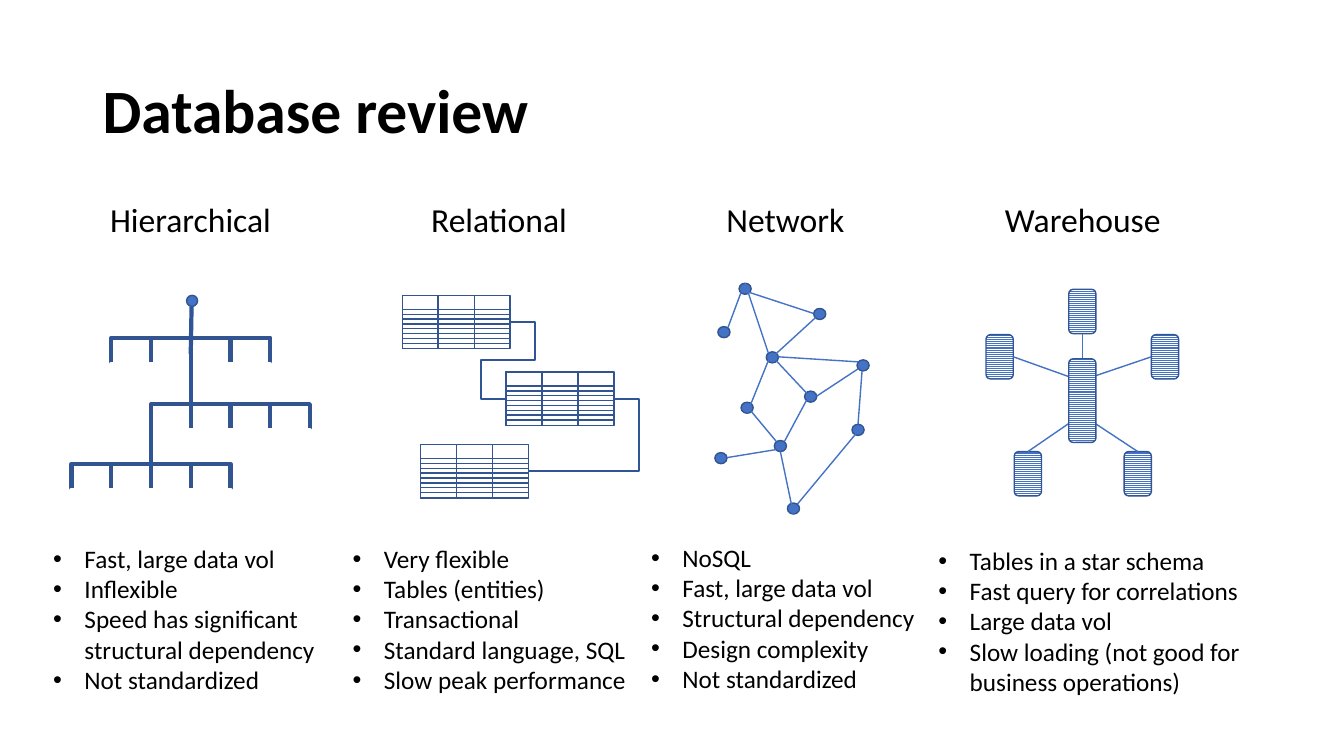
from dataclasses import dataclass

from lxml import etree
from pptx import Presentation
from pptx.dml.color import RGBColor
from pptx.enum.dml import MSO_PATTERN
from pptx.enum.shapes import MSO_CONNECTOR, MSO_SHAPE
from pptx.enum.text import MSO_ANCHOR, MSO_AUTO_SIZE, PP_ALIGN
from pptx.oxml.ns import qn
from pptx.shapes.autoshape import Shape
from pptx.shapes.connector import Connector
from pptx.shapes.shapetree import GroupShapes
from pptx.util import Inches, Pt

BLACK = RGBColor(0x00, 0x00, 0x00)
WHITE = RGBColor(0xFF, 0xFF, 0xFF)
BLUE = RGBColor(0x44, 0x72, 0xC4)
OUTLINE = RGBColor(0x32, 0x54, 0x91)
LINK = RGBColor(0x2F, 0x55, 0x97)
FONT = "Calibri"

RECTANGLE = MSO_SHAPE.RECTANGLE
ROUNDED = MSO_SHAPE.ROUNDED_RECTANGLE
OVAL = MSO_SHAPE.OVAL
STRAIGHT = MSO_CONNECTOR.STRAIGHT
ELBOW = MSO_CONNECTOR.ELBOW
TOP, LEFT, BOTTOM, RIGHT = range(4)

Point = tuple[float, float]


@dataclass(frozen=True)
class Column:
    heading: str
    heading_left: float
    heading_width: float
    list_left: float
    list_top: float
    list_width: float
    points: tuple[str, ...]


@dataclass(frozen=True)
class Satellite:
    left: float
    top: float
    side: int
    start: Point
    end: Point


COLUMNS = (
    Column("Hierarchical", 0.98, 1.82, 0.43, 5.34, 2.87,
           ("Fast, large data vol", "Inflexible",
            "Speed has significant structural dependency", "Not standardized")),
    Column("Relational", 4.17, 1.56, 3.4, 5.34, 2.93,
           ("Very flexible", "Tables (entities)", "Transactional",
            "Standard language, SQL", "Slow peak performance")),
    Column("Network", 7.1, 1.38, 6.36, 5.33, 2.85,
           ("NoSQL", "Fast, large data vol", "Structural dependency",
            "Design complexity", "Not standardized")),
    Column("Warehouse", 9.86, 1.76, 9.21, 5.36, 3.23,
           ("Tables in a star schema", "Fast query for correlations", "Large data vol",
            "Slow loading (not good for business operations)")),
)
TREE_ROWS = ((1, 3.35), (2, 4.01), (0, 4.6))
TABLES = ((3.99, 2.93), (5.02, 3.69), (4.17, 4.41))
NODES = (
    (7.33, 2.81), (8.07, 3.06), (8.5, 3.57), (7.12, 3.24), (7.6, 3.49), (7.35, 3.99),
    (7.09, 4.49), (7.98, 3.88), (7.68, 4.37), (8.45, 4.21), (7.81, 4.99),
)
EDGES = (
    ((7.35, 2.9), (7.22, 3.25)), ((7.43, 2.9), (8.07, 3.11)),
    ((7.72, 3.54), (8.51, 3.59)), ((7.39, 2.81), (7.62, 3.5)),
    ((8.51, 4.21), (8.55, 3.68)), ((8.1, 3.93), (8.51, 3.66)),
    ((7.78, 4.38), (8, 3.97)), ((7.45, 4.08), (7.7, 4.38)),
    ((7.21, 4.54), (7.7, 4.46)), ((7.91, 5), (8.55, 4.23)),
    ((7.62, 3.58), (8.09, 3.15)), ((7.7, 3.58), (8, 3.9)),
    ((7.62, 3.58), (7.41, 4.1)), ((7.87, 5.1), (7.74, 4.48)),
)
SATELLITES = (
    Satellite(10.6, 2.87, BOTTOM, (10.74, 3.31), (10.74, 3.56)),
    Satellite(9.78, 3.32, RIGHT, (10.06, 3.54), (10.61, 3.74)),
    Satellite(11.42, 3.32, LEFT, (11.42, 3.54), (10.83, 3.74)),
    Satellite(10.06, 4.48, TOP, (10.19, 4.48), (10.69, 4.14)),
    Satellite(11.15, 4.48, TOP, (11.29, 4.48), (10.83, 4.18)),
)


def add_span(para, text: str, size: float, bold: bool = False) -> None:
    span = para.add_run()
    span.text = text
    span.font.name = FONT
    span.font.size = Pt(size)
    span.font.bold = bold
    span.font.color.rgb = BLACK


def add_box(shapes, kind, left: float, top: float, width: float, height: float,
            fill: RGBColor | None = None, line: RGBColor = OUTLINE, weight: float = 1) -> Shape:
    box = shapes.add_shape(kind, Inches(left), Inches(top), Inches(width), Inches(height))
    box.shadow.inherit = False
    if fill is None:
        box.fill.background()
    else:
        box.fill.solid()
        box.fill.fore_color.rgb = fill
    box.line.color.rgb = line
    box.line.width = Pt(weight)
    return box


def add_link(shapes, start: Point, end: Point, color: RGBColor = BLUE,
             weight: float = 1, kind=STRAIGHT) -> Connector:
    link = shapes.add_connector(kind, *map(Inches, (*start, *end)))
    link.line.color.rgb = color
    link.line.width = Pt(weight)
    etree.SubElement(link._element.spPr, qn("a:effectLst"))
    return link


def bend_link(link: Connector, preset: str, bends: tuple[float, ...]) -> None:
    spans = ((link.begin_x, link.end_x), (link.begin_y, link.end_y))
    geometry = link._element.spPr.find(qn("a:prstGeom"))
    geometry.set("prst", preset)
    guides = geometry.find(qn("a:avLst"))
    if guides is None:
        guides = etree.SubElement(geometry, qn("a:avLst"))
    for index, bend in enumerate(bends):
        start, end = spans[index % 2]
        ratio = round((Inches(bend) - start) / (end - start) * 100000)
        etree.SubElement(guides, qn("a:gd"), name=f"adj{index + 1}", fmla=f"val {ratio}")


def add_heading(shapes, column: Column) -> None:
    box = shapes.add_textbox(Inches(column.heading_left), Inches(1.92),
                             Inches(column.heading_width), Inches(0.5))
    box.text_frame.word_wrap = False
    box.text_frame.auto_size = MSO_AUTO_SIZE.SHAPE_TO_FIT_TEXT
    para = box.text_frame.paragraphs[0]
    para.alignment = PP_ALIGN.CENTER
    add_span(para, column.heading, 24)


def add_list(shapes, column: Column) -> None:
    box = shapes.add_textbox(Inches(column.list_left), Inches(column.list_top),
                             Inches(column.list_width), Inches(1.62))
    frame = box.text_frame
    frame.word_wrap = True
    frame.auto_size = MSO_AUTO_SIZE.SHAPE_TO_FIT_TEXT
    for index, point in enumerate(column.points):
        para = frame.add_paragraph() if index else frame.paragraphs[0]
        properties = para._p.get_or_add_pPr()
        properties.set("marL", str(Inches(0.31)))
        properties.set("indent", str(Inches(-0.31)))
        etree.SubElement(properties, qn("a:buFont"), typeface="Arial")
        etree.SubElement(properties, qn("a:buChar"), char="•")
        add_span(para, point, 18)


def draw_hierarchy(shapes: GroupShapes) -> None:
    pitch = 0.394
    add_box(shapes, OVAL, 1.85, 2.93, 0.11, 0.11, BLUE)
    rows = []
    for offset, top in TREE_ROWS:
        left = 0.71 + offset * pitch
        rows.append([add_box(shapes, RECTANGLE, left + index * pitch, top, pitch, 0.32, weight=3)
                     for index in range(4)])
        add_box(shapes, RECTANGLE, left, top + 0.26, 4 * pitch, 0.14, WHITE, WHITE, 3)
    upper, middle, lower = rows
    for start, end, parent, child in (
        ((1.89, 3.51), (1.89, 4.17), upper[2], middle[1]),
        ((1.5, 4.17), (1.5, 4.76), middle[0], lower[2]),
    ):
        link = add_link(shapes, start, end, LINK, 3)
        link.begin_connect(parent, LEFT)
        link.end_connect(child, LEFT)
    stem = add_link(shapes, (1.9, 3.04), (1.89, 3.51), LINK, 3)
    stem.end_connect(upper[2], LEFT)


def draw_table(shapes: GroupShapes, left: float, top: float) -> Shape:
    outline = add_box(shapes, RECTANGLE, left, top, 1.07, 0.53, WHITE)
    for row in range(7):
        add_box(shapes, RECTANGLE, left, top + 0.14 + row * 0.048, 1.07, 0.05, WHITE)
    for field in range(2):
        add_box(shapes, RECTANGLE, left + field * 0.355, top, 0.36, 0.53)
    return outline


def draw_relations(shapes: GroupShapes) -> None:
    first, second, third = [draw_table(shapes, left, top) for left, top in TABLES]
    for start, end, source, target, site, preset, bends in (
        ((5.06, 3.19), (5.02, 3.96), first, second, LEFT, "bentConnector5", (5.31, 3.57, 4.77)),
        ((6.09, 4), (5.24, 4.71), second, third, RIGHT, "bentConnector3", (6.34,)),
    ):
        link = add_link(shapes, start, end, LINK, 1.5, ELBOW)
        link.begin_connect(source, RIGHT)
        link.end_connect(target, site)
        bend_link(link, preset, bends)


def draw_network(shapes: GroupShapes) -> None:
    for left, top in NODES:
        add_box(shapes, OVAL, left, top, 0.12, 0.11, BLUE)
    for start, end in EDGES:
        add_link(shapes, start, end)


def draw_store(shapes: GroupShapes, left: float, top: float, height: float) -> Shape:
    store = add_box(shapes, ROUNDED, left, top, 0.27, height)
    store.fill.patterned()
    store.fill.pattern = MSO_PATTERN.LIGHT_HORIZONTAL
    store.fill.fore_color.rgb = BLUE
    store.fill.back_color.rgb = WHITE
    return store


def draw_warehouse(shapes: GroupShapes) -> None:
    stores = [draw_store(shapes, item.left, item.top, 0.44) for item in SATELLITES]
    links = [add_link(shapes, item.start, item.end) for item in SATELLITES]
    for link, store, item in zip(links, stores, SATELLITES):
        link.begin_connect(store, item.side)
    hub = draw_store(shapes, 10.6, 3.56, 0.83)
    links[0].end_connect(hub, TOP)


def main() -> None:
    deck = Presentation()
    deck.slide_width, deck.slide_height = Inches(13.33), Inches(7.5)
    page = deck.slides.add_slide(deck.slide_layouts[6])
    title = page.shapes.add_textbox(Inches(0.92), Inches(0.4), Inches(11.5), Inches(1.45))
    title.text_frame.word_wrap = True
    title.text_frame.vertical_anchor = MSO_ANCHOR.MIDDLE
    para = title.text_frame.paragraphs[0]
    para.line_spacing = 0.9
    add_span(para, "Database review", 44, True)
    drawings = (draw_hierarchy, draw_relations, draw_network, draw_warehouse)
    for column, draw in zip(COLUMNS, drawings):
        shapes = page.shapes.add_group_shape().shapes
        add_heading(shapes, column)
        draw(shapes)
        add_list(shapes, column)
    deck.save("out.pptx")


if __name__ == "__main__":
    main()
